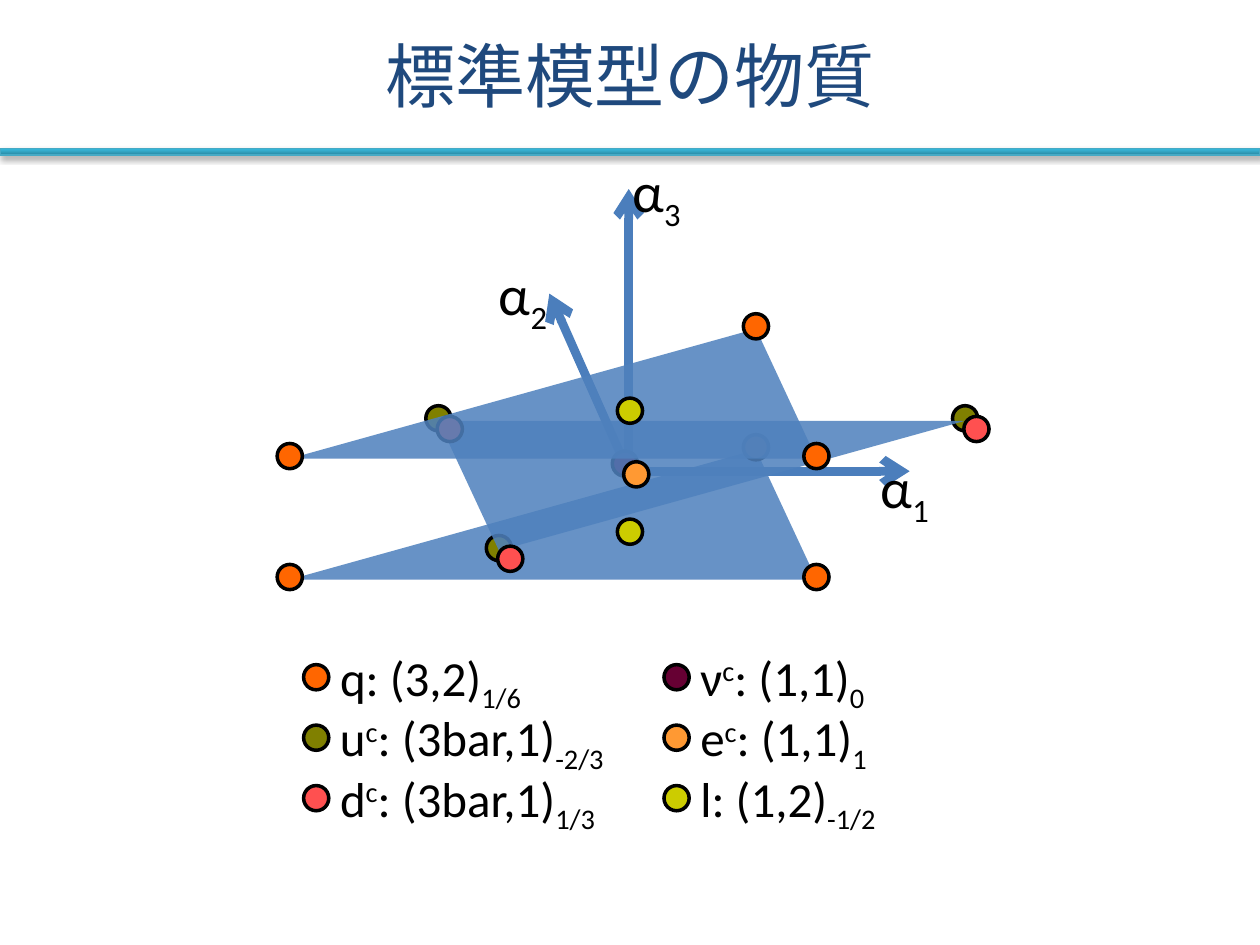
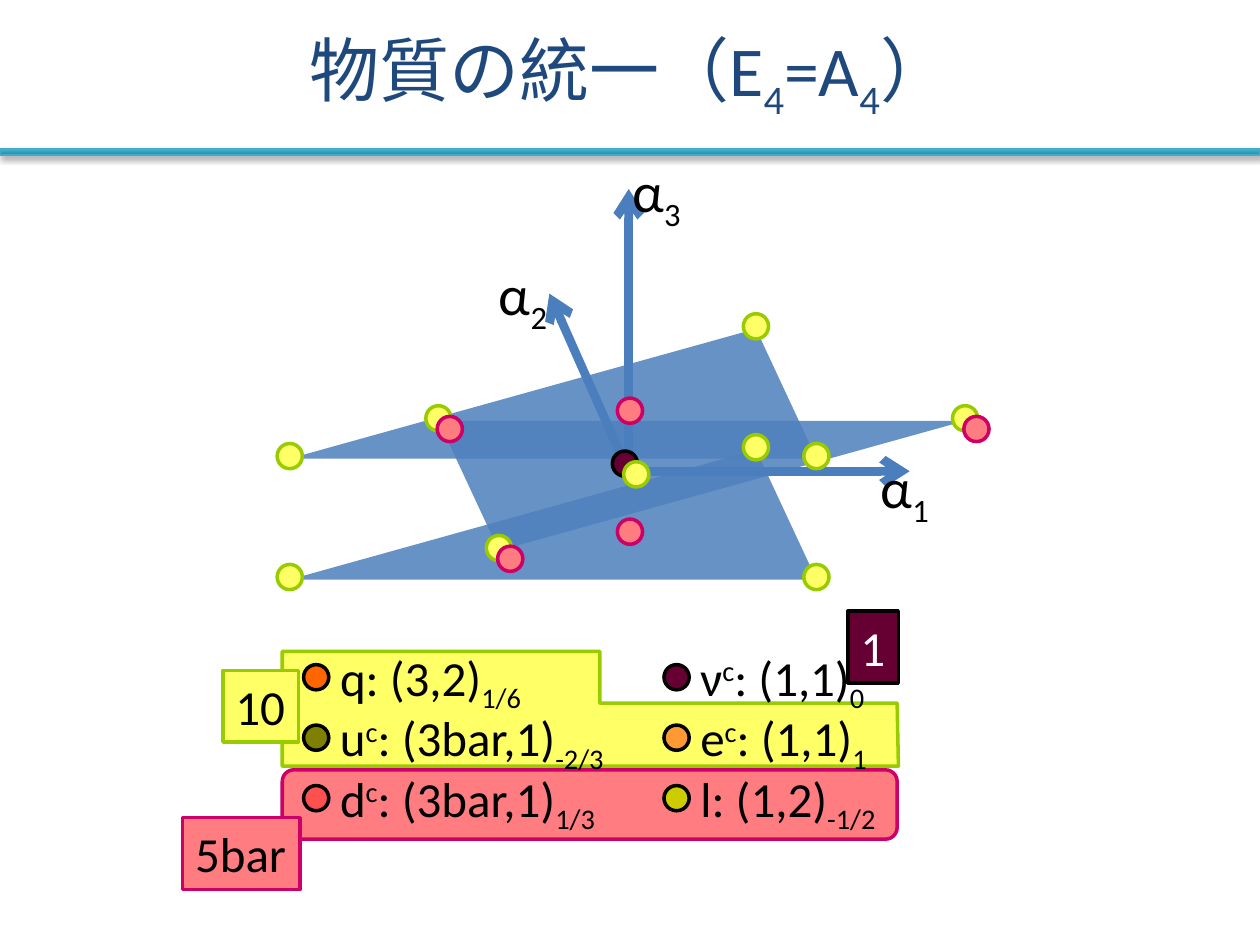
from lxml import etree
from pptx import Presentation
from pptx.dml.color import RGBColor
from pptx.enum.shapes import MSO_CONNECTOR, MSO_SHAPE
from pptx.enum.text import MSO_ANCHOR, MSO_AUTO_SIZE, PP_ALIGN
from pptx.oxml import parse_xml
from pptx.oxml.ns import qn
from pptx.util import Inches, Pt

OVAL, RECT, ROUND = MSO_SHAPE.OVAL, MSO_SHAPE.RECTANGLE, MSO_SHAPE.ROUNDED_RECTANGLE
LINE, CENTER, MIDDLE = MSO_CONNECTOR.STRAIGHT, PP_ALIGN.CENTER, MSO_ANCHOR.MIDDLE
FIT = MSO_AUTO_SIZE.SHAPE_TO_FIT_TEXT

deck = Presentation()
deck.slide_width, deck.slide_height = Inches(10), Inches(7.5)
CELL = deck.slide_width / 100  # the slide is a grid of 100 by 75 cells
FONT = "Calibri"
DOT = 2

COLORS = {
    "title": "1F497D", "text": "000000", "white": "FFFFFF",
    "axis": "4B7EBC", "plate": "4F81BD", "band": "46AAC5",
    "q": "FF6600", "u": "808000", "d": "FF5050",
    "ν": "660033", "e": "FF9933", "l": "CCCC00",
    "ten": "FFFF66", "ten edge": "99CC00",
    "five": "FF7C80", "five edge": "CC0066",
    "one": "660033", "one edge": "000000",
}
UNITY = {"q": "ten", "u": "ten", "e": "ten", "d": "five", "l": "five", "ν": "one"}

GRAD = """<a:gradFill xmlns:a="http://schemas.openxmlformats.org/drawingml/2006/main" rotWithShape="1">
<a:gsLst><a:gs pos="0"><a:srgbClr val="2A88A2"/></a:gs><a:gs pos="80000"><a:srgbClr val="37B1D2"/></a:gs>
<a:gs pos="100000"><a:srgbClr val="34B4D6"/></a:gs></a:gsLst><a:lin ang="16200000" scaled="0"/></a:gradFill>"""
SHADE = """<a:outerShdw xmlns:a="http://schemas.openxmlformats.org/drawingml/2006/main"
blurRad="40000" dist="23000" dir="5400000" rotWithShape="0">
<a:srgbClr val="000000"><a:alpha val="35000"/></a:srgbClr></a:outerShdw>"""

# Legend: one row per pair of particles, with the width of each text
ROWS = [
    [("q", "q: (3,2)|_1/6", 17.1), ("ν", "ν|^c|: (1,1)|_0", 15.5)],
    [("u", "u|^c|: (3bar,1)|_-2/3", 24), ("e", "e|^c|: (1,1)|_1", 16.3)],
    [("d", "d|^c|: (3bar,1)|_1/3", 23.2), ("l", "l: (1,2)|_-1/2", 16.7)],
]
# Axes: start, end, label, label corner
AXES = [
    ((50, 37.4), (72.2, 37.4), "α|_1", (68.9, 35.4)),
    ((49.9, 37.3), (49.9, 15), "α|_3", (49.2, 11.9)),
    ((49.9, 37.5), (43.6, 23.3), "α|_2", (38.6, 20.1)),
]
# A weight triangle: three corners and the middle, seen from its base corner
CORNERS = [(0, 0), (41.8, 0), (37, -10.3)]
MID = (27, -3.6)
# Drawing steps: kind, base corner, direction, corner particle, middle particle
STEPS = [
    ("axes", 0, 0, 0, "", ""),
    ("plate", 23, 46, 1, "", ""),
    ("dots", 23, 45.8, 1, "q", "l"),
    ("dots", 76.6, 33.2, -1, "u", "ν"),
    ("plate", 76.6, 33.4, -1, "", ""),
    ("dots", 77.5, 34.05, -1, "d", "e"),
    ("plate", 23, 36.4, 1, "", ""),
    ("dots", 23, 36.2, 1, "q", "l"),
]
TAGS = [
    ("10", "ten", "text", (17.7, 53.2, 6, 5.7)),
    ("5bar", "five", "text", (14.5, 64.9, 9.3, 5.7)),
    ("1", "one", "white", (67.3, 48.5, 4, 5.7)),
]
PANEL = [(22.4, 60.8), (22.4, 51.7), (47.6, 51.7), (47.6, 55.8), (71.2, 55.8), (71.3, 60.8)]
SLIDES = [("標準模型の物質", False), ("物質の統一（E|_4|=A|_4|）", True)]


def form(shapes, kind, spots, fill=None, edge=None, wide=2):
    """Add a preset shape in a box, or a polygon through points if kind is None."""
    if kind is None:
        points = [(round(x * CELL), round(y * CELL)) for x, y in spots]
        build = shapes.build_freeform(*points[0])
        build.add_line_segments(points[1:], close=True)
        item = build.convert_to_shape()
    else:
        item = shapes.add_shape(kind, *(round(n * CELL) for n in spots))
    item.shadow.inherit = False
    if fill:
        item.fill.solid()
        item.fill.fore_color.rgb = RGBColor.from_string(COLORS[fill])
    if edge:
        item.line.color.rgb = RGBColor.from_string(COLORS[edge])
        item.line.width = Pt(wide)
    else:
        item.line.fill.background()
    return item


def write(item, text, size, color="text", align=None):
    """Write runs split by |; a leading ^ raises a run and _ lowers it."""
    frame = item.text_frame
    frame.word_wrap = align is not None
    frame.vertical_anchor = MIDDLE if align else MSO_ANCHOR.TOP
    if not align:
        frame.auto_size = FIT
    line = frame.paragraphs[0]
    line.alignment = align or PP_ALIGN.LEFT
    for part in text.split("|"):
        run = line.add_run()
        run.text = part.lstrip("^_")
        run.font.name, run.font.size = FONT, Pt(size)
        run.font.color.rgb = RGBColor.from_string(COLORS[color])
        if part[0] in "^_":
            base = "30000" if part[0] == "^" else "-25000"
            run._r.get_or_add_rPr().set("baseline", base)


for title, unified in SLIDES:
    shapes = deck.slides.add_slide(deck.slide_layouts[6]).shapes

    band = form(shapes, RECT, (0, 11.8, 100, 0.5), edge="band", wide=0.75)
    band._element.spPr.insert(2, parse_xml(GRAD))
    band._element.spPr.find(qn("a:effectLst")).append(parse_xml(SHADE))
    head = shapes.add_textbox(0, 0, deck.slide_width, round(11.8 * CELL))
    write(head, title, 40, "title", CENTER)

    if unified:
        form(shapes, None, PANEL, "ten", "ten edge")
        form(shapes, ROUND, (22.4, 61.1, 48.8, 5.5), "five", "five edge")

    for row, pair in enumerate(ROWS):
        group = shapes.add_group_shape().shapes
        top = 50.9 + 4.8 * row
        for col, (name, text, width) in enumerate(pair):
            left = 26 + 28.6 * col
            form(group, OVAL, (left - 1.9, top + 1.85, DOT, DOT), name, "text")
            box = group.add_textbox(*(round(n * CELL) for n in (left, top, width, 5.7)))
            write(box, text, 28)

    # On the unified slide the plates lie behind everything else
    steps = sorted(STEPS, key=lambda step: step[0] != "plate") if unified else STEPS
    for kind, x, y, way, outer, inner in steps:
        spots = [(x + way * dx, y + way * dy) for dx, dy in CORNERS + [MID]]
        if kind == "axes":
            for start, end, label, corner in AXES:
                axis = shapes.add_connector(LINE, *(round(n * CELL) for n in start + end))
                axis.line.color.rgb = RGBColor.from_string(COLORS["axis"])
                axis.line.width = Pt(5)
                etree.SubElement(axis.line._get_or_add_ln(), qn("a:tailEnd"), type="arrow")
                etree.SubElement(axis._element.spPr, qn("a:effectLst"))
                box = shapes.add_textbox(*(round(n * CELL) for n in corner + (6.1, 6.4)))
                write(box, label, 32)
        elif kind == "plate":
            plate = form(shapes, None, spots[:3], "plate")
            tint = plate._element.spPr.find(qn("a:solidFill"))[0]
            etree.SubElement(tint, qn("a:alpha"), val="86000")
        else:
            for (cx, cy), name in zip(spots, [outer] * 3 + [inner]):
                fill = UNITY[name] if unified else name
                edge = fill + " edge" if unified else "text"
                form(shapes, OVAL, (cx - DOT / 2, cy - DOT / 2, DOT, DOT), fill, edge)

    if unified:
        for text, name, color, spots in TAGS:
            write(form(shapes, RECT, spots, name, name + " edge"), text, 28, color)

deck.save("out.pptx")
